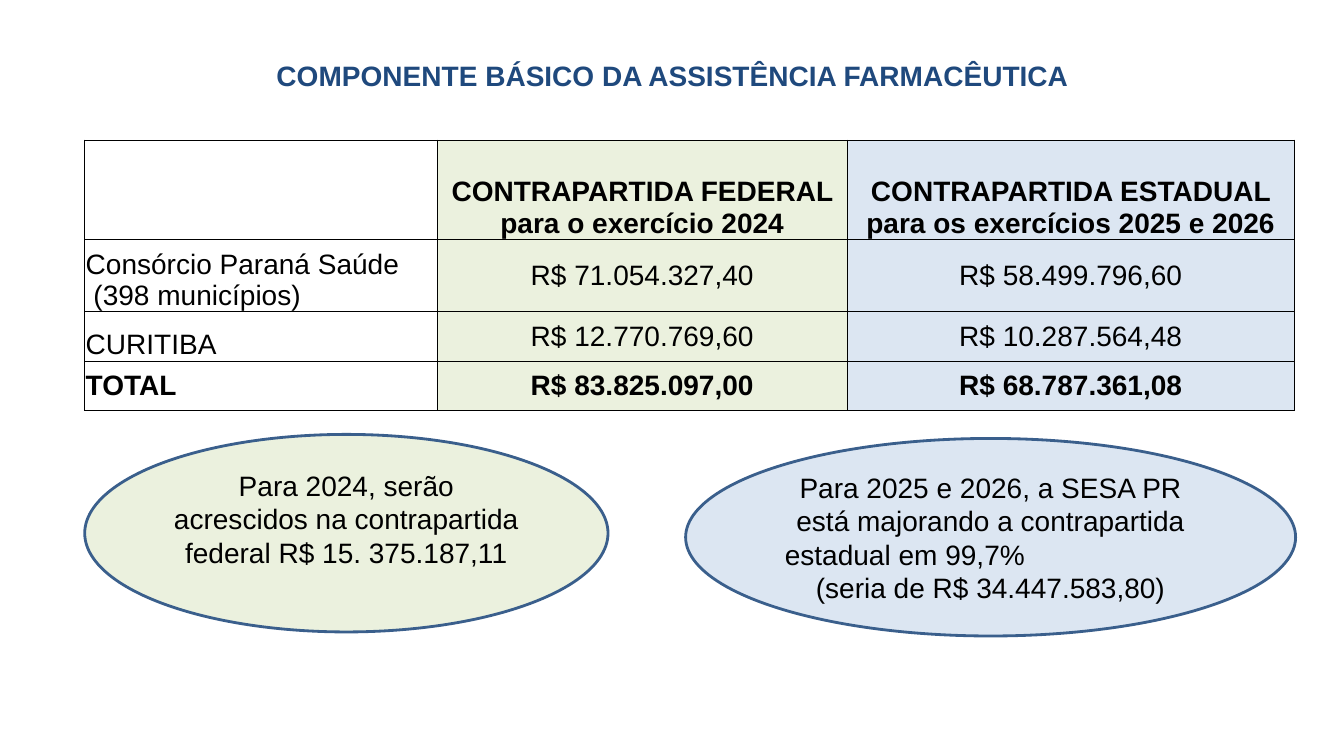
from lxml import etree
from pptx import Presentation
from pptx.dml.color import RGBColor
from pptx.enum.shapes import MSO_SHAPE
from pptx.enum.text import MSO_ANCHOR, PP_ALIGN
from pptx.oxml.ns import qn
from pptx.util import Inches, Pt

BLACK = RGBColor(0x00, 0x00, 0x00)
NAVY = RGBColor(0x1F, 0x49, 0x7D)
OUTLINE = RGBColor(0x3A, 0x5F, 0x8C)
GREEN = RGBColor(0xEB, 0xF1, 0xDE)
BLUE = RGBColor(0xDC, 0xE6, 0xF2)

LEFT, CENTER = PP_ALIGN.LEFT, PP_ALIGN.CENTER
MIDDLE, BOTTOM = MSO_ANCHOR.MIDDLE, MSO_ANCHOR.BOTTOM
ELLIPSE = MSO_SHAPE.OVAL

COLUMN_WIDTHS = [3.5, 4.06, 4.44]
COLUMN_FILLS = [None, GREEN, BLUE]
ROW_HEIGHTS = [0.98, 0.72, 0.49, 0.49]
ROWS = [
    ["", "CONTRAPARTIDA FEDERAL para o exercício 2024",
     "CONTRAPARTIDA ESTADUAL para os exercícios 2025 e 2026"],
    ["Consórcio Paraná Saúde\n (398 municípios)", "R$ 71.054.327,40", "R$ 58.499.796,60"],
    ["CURITIBA", "R$ 12.770.769,60", "R$ 10.287.564,48"],
    ["TOTAL", "R$ 83.825.097,00", "R$ 68.787.361,08"],
]


def write_text(text_frame, text, alignment, color=BLACK, bold=False):
    text_frame.text = text
    for paragraph in text_frame.paragraphs:
        paragraph.alignment = alignment
        paragraph.font.size = Pt(20)
        for run in paragraph.runs:
            run.font.name = "Arial"
            run.font.size = Pt(20)
            run.font.bold = bold
            run.font.color.rgb = color


def add_title(slide, left, top, width, height):
    title = slide.shapes.add_textbox(Inches(left), Inches(top), Inches(width), Inches(height))
    frame = title.text_frame
    frame.word_wrap = True
    frame.vertical_anchor = MIDDLE
    frame.margin_left = frame.margin_right = frame.margin_top = frame.margin_bottom = 0
    write_text(frame, "COMPONENTE BÁSICO DA ASSISTÊNCIA FARMACÊUTICA", CENTER, NAVY, True)


def set_borders(cell, widths):
    # Borders come before the fill in the cell properties
    properties = cell._tc.get_or_add_tcPr()
    for index, (side, width) in enumerate(widths.items()):
        line = etree.Element(qn(f"a:ln{side}"), w=str(Pt(width)))
        fill = etree.SubElement(line, qn("a:solidFill"))
        etree.SubElement(fill, qn("a:srgbClr"), val=str(BLACK))
        properties.insert(index, line)


def add_funding_table(slide, left, top):
    last_row, last_column = len(ROWS) - 1, len(COLUMN_WIDTHS) - 1
    table = slide.shapes.add_table(
        len(ROWS), len(COLUMN_WIDTHS), Inches(left), Inches(top),
        Inches(sum(COLUMN_WIDTHS)), Inches(sum(ROW_HEIGHTS))).table
    for column, width in zip(table.columns, COLUMN_WIDTHS):
        column.width = Inches(width)

    for row_index, (texts, height) in enumerate(zip(ROWS, ROW_HEIGHTS)):
        table.rows[row_index].height = Inches(height)
        for column_index, (text, color) in enumerate(zip(texts, COLUMN_FILLS)):
            cell = table.cell(row_index, column_index)
            cell.margin_left = cell.margin_right = cell.margin_top = Inches(0.01)
            cell.margin_bottom = 0
            is_label = column_index == 0
            at_bottom = row_index == 0 or (is_label and row_index < last_row)
            cell.vertical_anchor = BOTTOM if at_bottom else MIDDLE
            write_text(cell.text_frame, text, LEFT if is_label else CENTER,
                       bold=row_index in (0, last_row))
            if color is None:
                cell.fill.background()
            else:
                cell.fill.solid()
                cell.fill.fore_color.rgb = color
            # Outer edges are thicker than inner ones
            set_borders(cell, {
                "L": 1 if is_label else 0.5,
                "R": 1 if column_index == last_column else 0.5,
                "T": 1 if row_index == 0 else 0.5,
                "B": 1 if row_index == last_row else 0.5,
            })


def add_note(slide, left, top, width, height, text, color, bottom_margin=0.05):
    note = slide.shapes.add_shape(
        ELLIPSE, Inches(left), Inches(top), Inches(width), Inches(height))
    note.shadow.inherit = False
    note.fill.solid()
    note.fill.fore_color.rgb = color
    note.line.color.rgb = OUTLINE
    note.line.width = Pt(2)
    frame = note.text_frame
    frame.word_wrap = True
    frame.vertical_anchor = MIDDLE
    frame.margin_bottom = Inches(bottom_margin)
    write_text(frame, text, CENTER)
    return note


def main():
    presentation = Presentation()
    presentation.slide_width = Inches(13.33)
    presentation.slide_height = Inches(7.5)
    slide = presentation.slides.add_slide(presentation.slide_layouts[6])

    add_title(slide, 0.67, 0.58, 12, 0.34)
    add_funding_table(slide, 0.84, 1.39)

    # Notes under the table
    add_note(slide, 0.84, 4.31, 5.19, 1.96,
             "Para 2024, serão acrescidos na contrapartida federal R$ 15. 375.187,11",
             GREEN, bottom_margin=0.34)
    state_note = add_note(
        slide, 6.8, 4.35, 6.05, 1.96,
        "Para 2025 e 2026, a SESA PR está majorando a contrapartida\n"
        "estadual em 99,7%\n(seria de R$ 34.447.583,80)", BLUE)
    state_note.text_frame.paragraphs[1].alignment = LEFT

    presentation.save("out.pptx")


if __name__ == "__main__":
    main()
